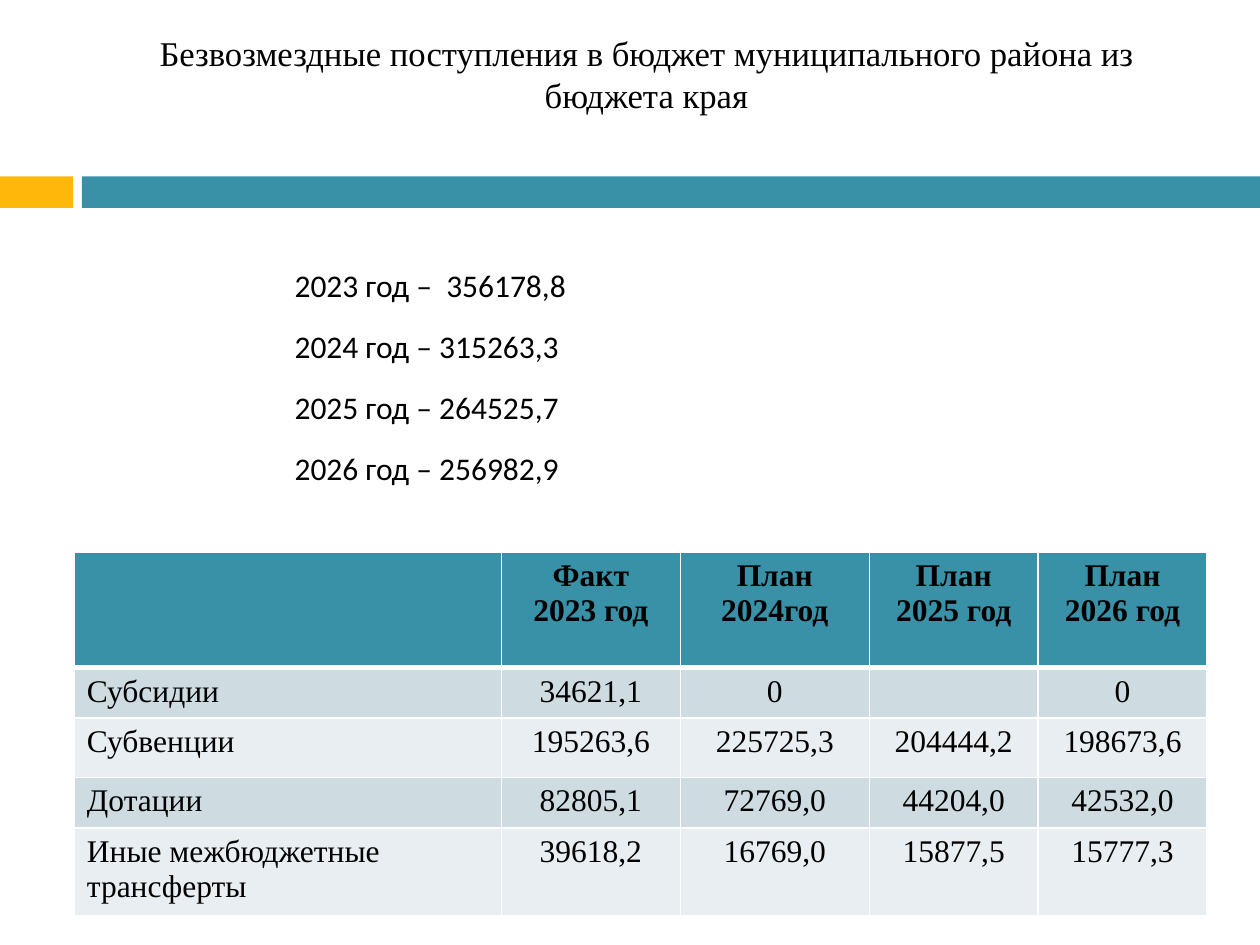
from lxml.etree import SubElement
from pptx import Presentation
from pptx.dml.color import RGBColor
from pptx.enum.shapes import MSO_SHAPE as Preset
from pptx.enum.text import MSO_ANCHOR as Anchor, PP_ALIGN as Align
from pptx.oxml.ns import qn
from pptx.util import Inches, Pt

BLACK = RGBColor(0x00, 0x00, 0x00)
TEAL = RGBColor(0x38, 0x91, 0xA7)
AMBER = RGBColor(0xFE, 0xB8, 0x0A)
BAND_DARK = RGBColor(0xCE, 0xDC, 0xE1)
BAND_LIGHT = RGBColor(0xE8, 0xEE, 0xF1)
WHITE = RGBColor(0xFF, 0xFF, 0xFF)

SERIF = "Times New Roman"
TITLE = "Безвозмездные поступления в бюджет муниципального района из бюджета края"
YEAR_TOTALS = [
    "2023 год –  356178,8",
    "2024 год – 315263,3",
    "2025 год – 264525,7",
    "2026 год – 256982,9",
]
TRANSFERS = [
    ["", "Факт\n2023 год", "План\n2024год", "План\n2025 год", "План\n2026 год"],
    ["Субсидии", "34621,1", "0", "", "0"],
    ["Субвенции", "195263,6", "225725,3", "204444,2", "198673,6"],
    ["Дотации", "82805,1", "72769,0", "44204,0", "42532,0"],
    ["Иные межбюджетные трансферты", "39618,2", "16769,0", "15877,5", "15777,3"],
]
COLUMN_WIDTHS = [3.39, 1.42, 1.5, 1.34, 1.34]
ROW_HEIGHTS = [0.92, 0.4, 0.47, 0.4, 0.7]


def apply_format(target, values):
    """Set every attribute named in the dict of format values."""
    for name, value in values.items():
        setattr(target, name, value)


def write_lines(frame, lines, font, paragraph_format):
    """Write one formatted paragraph for each line of text."""
    for index, line in enumerate(lines):
        paragraph = frame.add_paragraph() if index else frame.paragraphs[0]
        apply_format(paragraph, paragraph_format)
        run = paragraph.add_run()
        run.text = line
        apply_format(run.font, font)
        run.font.color.rgb = BLACK


def add_bar(slide, left, width, color):
    """Draw one piece of the dividing stripe."""
    bar = slide.shapes.add_shape(
        Preset.RECTANGLE, Inches(left), Inches(1.4), Inches(width), Inches(0.25)
    )
    bar.shadow.inherit = False
    bar.fill.solid()
    bar.fill.fore_color.rgb = color
    bar.line.fill.background()


def add_text(slide, box, lines, anchor, font, paragraph_format):
    """Add a wrapping text box."""
    frame = slide.shapes.add_textbox(*map(Inches, box)).text_frame
    apply_format(frame, {"word_wrap": True, "vertical_anchor": anchor})
    write_lines(frame, lines, font, paragraph_format)


def add_borders(cell, top, bottom):
    """Rule the cell in white with the given top and bottom widths in points."""
    properties = cell._tc.get_or_add_tcPr()
    sides = {"a:lnL": 1, "a:lnR": 1, "a:lnT": top, "a:lnB": bottom}
    for position, (side, width) in enumerate(sides.items()):
        border = SubElement(properties, qn(side), w=str(Pt(width)))
        fill = SubElement(border, qn("a:solidFill"))
        SubElement(fill, qn("a:srgbClr"), val=str(WHITE))
        properties.insert(position, border)


def add_transfers_table(slide):
    """Add the table of transfers by kind and year."""
    table = slide.shapes.add_table(
        len(TRANSFERS), len(COLUMN_WIDTHS), Inches(0.59), Inches(4.38),
        Inches(sum(COLUMN_WIDTHS)), Inches(sum(ROW_HEIGHTS)),
    ).table
    for column, width in zip(table.columns, COLUMN_WIDTHS):
        column.width = Inches(width)
    for row, height in zip(table.rows, ROW_HEIGHTS):
        row.height = Inches(height)
    for r, values in enumerate(TRANSFERS):
        band = BAND_DARK if r % 2 else BAND_LIGHT
        font = {"name": SERIF, "size": Pt(18), "bold": r == 0}
        for c, value in enumerate(values):
            cell = table.cell(r, c)
            cell.fill.solid()
            cell.fill.fore_color.rgb = band if r else TEAL
            add_borders(cell, top=3 if r == 1 else 1, bottom=1 if r else 3)
            alignment = Align.CENTER if c else Align.LEFT
            write_lines(cell.text_frame, value.split("\n"), font, {"alignment": alignment})


def main():
    """Build the slide and save it."""
    deck = Presentation()
    apply_format(deck, {"slide_width": Inches(10), "slide_height": Inches(7.5)})
    slide = deck.slides.add_slide(deck.slide_layouts[6])
    add_bar(slide, 0, 0.58, AMBER)
    add_bar(slide, 0.65, 9.35, TEAL)
    add_text(
        slide, (0.67, 0.25, 8.92, 0.67), [TITLE], Anchor.MIDDLE,
        {"name": SERIF, "size": Pt(19.8)}, {"alignment": Align.CENTER},
    )
    add_transfers_table(slide)
    add_text(
        slide, (2.24, 2.02, 5, 2.4), YEAR_TOTALS, Anchor.TOP,
        {"name": "Calibri", "size": Pt(18)},
        {"line_spacing": 1.15, "space_after": Pt(10)},
    )
    deck.save("out.pptx")


if __name__ == "__main__":
    main()
